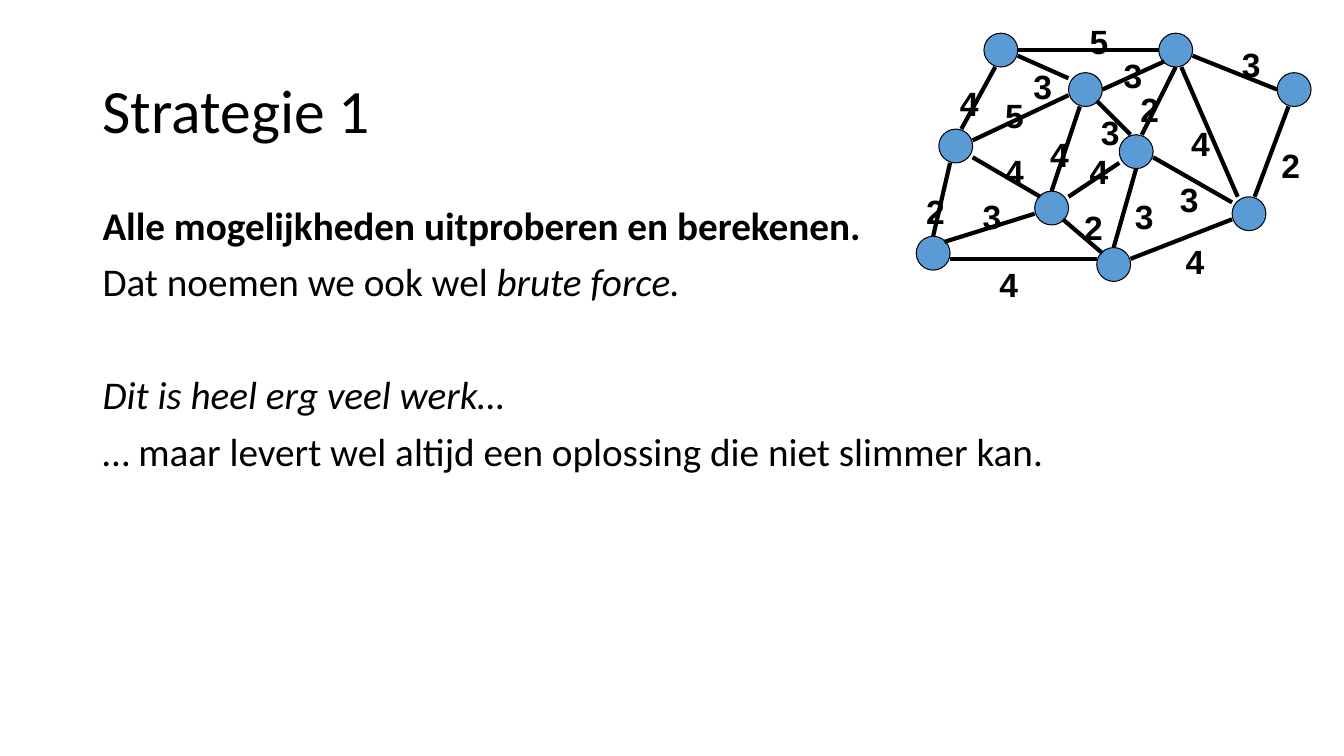
import pptx
import pptx.util
import pptx.dml.color
import pptx.enum.shapes
import pptx.enum.text
import pptx.oxml
import pptx.oxml.ns
from pptx.util import Cm


def color(hex_string):
    return pptx.dml.color.RGBColor.from_string(hex_string)


def format_run(run, font_name, size, bold=False, italic=False):
    run.font.name = font_name
    run.font.size = pptx.util.Pt(size)
    run.font.bold = bold
    run.font.italic = italic
    run.font.color.rgb = color("000000")


presentation = pptx.Presentation()
presentation.slide_width = Cm(33.87)
presentation.slide_height = Cm(19.05)
slide = presentation.slides.add_slide(presentation.slide_layouts[1])

# Title and body placeholders
title = slide.shapes.title
body = slide.placeholders[1]
for placeholder, top, height in [(title, 1.01, 3.68), (body, 5.07, 12.09)]:
    placeholder.left, placeholder.top = Cm(2.33), Cm(top)
    placeholder.width, placeholder.height = Cm(29.21), Cm(height)
    placeholder.text_frame.auto_size = pptx.enum.text.MSO_AUTO_SIZE.NONE

title.text_frame.text = "Strategie 1"
title.text_frame.vertical_anchor = pptx.enum.text.MSO_ANCHOR.MIDDLE
title_paragraph = title.text_frame.paragraphs[0]
title_paragraph.alignment = pptx.enum.text.PP_ALIGN.LEFT
title_paragraph.line_spacing = 0.9
format_run(title_paragraph.runs[0], "Calibri", 44)

# Body paragraphs: space before, then runs as (text, bold, italic)
body_paragraphs = [
    (10, [("Alle mogelijkheden uitproberen en berekenen.", True, False)]),
    (10, [("Dat noemen we ook wel ", False, False), ("brute force.", False, True)]),
    (50.75, [("Dit is heel erg veel werk…", False, True)]),
    (10, [("… maar levert wel altijd een oplossing die niet slimmer kan.", False, False)]),
]
body.text_frame.text = "\n".join("" for _ in body_paragraphs)
for paragraph, (space_before, runs) in zip(body.text_frame.paragraphs, body_paragraphs):
    paragraph.line_spacing = 0.9
    paragraph.space_before = pptx.util.Pt(space_before)
    paragraph.space_after = pptx.util.Pt(0)
    properties = paragraph._p.get_or_add_pPr()
    properties.set("marL", "0")
    properties.set("indent", "0")
    properties.append(pptx.oxml.parse_xml(f'<a:buNone {pptx.oxml.ns.nsdecls("a")}/>'))
    for text, bold, italic in runs:
        run = paragraph.add_run()
        run.text = text
        format_run(run, "Calibri", 28, bold, italic)

# Weighted graph, laid out on a grid of 70 units across
graph_left, graph_top, unit = 23.09, 0.41, 9.95 / 70
graph = slide.shapes.add_group_shape()

nodes = [(12, 3), (43, 3), (64, 10), (36, 21), (27, 10),
         (4, 20), (0, 39), (21, 31), (32, 41), (56, 32)]

# Each edge: start, end, weight, corner of the weight label
edges = [
    ((5, 40), (21, 35), 3, (10, 31)),
    ((8, 20), (14, 9), 4, (6, 11)),
    ((6, 26), (3, 39), 2, (0, 30)),
    ((6, 43), (32, 43), 4, (13, 43)),
    ((26, 36), (33, 42), 2, (28, 33)),
    ((10, 22), (27, 14), 5, (14, 13)),
    ((18, 7), (27, 11), 3, (19, 8)),
    ((18, 6), (43, 6), 5, (29, 0)),
    ((49, 7), (64, 13), 3, (56, 4)),
    ((33, 13), (44, 8), 3, (35, 6)),
    ((29, 16), (24, 31), 4, (22, 20)),
    ((10, 25), (22, 32), 4, (14, 23)),
    ((32, 15), (38, 21), 3, (31, 16)),
    ((27, 32), (36, 26), 4, (29, 23)),
    ((39, 27), (35, 41), 3, (37, 31)),
    ((38, 43), (56, 36), 4, (46, 39)),
    ((42, 25), (56, 33), 3, (45, 28)),
    ((47, 9), (57, 32), 4, (47, 18)),
    ((66, 16), (60, 32), 2, (63, 22)),
    ((46, 9), (40, 21), 2, (38, 12)),
]


def place(point):
    return Cm(graph_left + point[0] * unit), Cm(graph_top + point[1] * unit)


for node in nodes:
    circle = graph.shapes.add_shape(
        pptx.enum.shapes.MSO_SHAPE.OVAL, *place(node), Cm(6 * unit), Cm(6 * unit))
    circle.shadow.inherit = False
    circle.fill.solid()
    circle.fill.fore_color.rgb = color("5B9BD5")
    circle.line.color.rgb = color("000000")
    circle.line.width = pptx.util.Pt(0.75)

for start, end, weight, corner in edges:
    connector = graph.shapes.add_connector(
        pptx.enum.shapes.MSO_CONNECTOR.STRAIGHT, *place(start), *place(end))
    connector.line.color.rgb = color("000000")
    connector.line.width = pptx.util.Pt(3)
    connector._element.spPr.append(
        pptx.oxml.parse_xml(f'<a:effectLst {pptx.oxml.ns.nsdecls("a")}/>'))

# Weights lie on top of all edges
for start, end, weight, corner in edges:
    label = graph.shapes.add_textbox(*place(corner), Cm(1), Cm(1.28))
    label.text_frame.word_wrap = False
    label.text_frame.auto_size = pptx.enum.text.MSO_AUTO_SIZE.SHAPE_TO_FIT_TEXT
    label.text_frame.text = str(weight)
    format_run(label.text_frame.paragraphs[0].runs[0], "Arial", 24, bold=True)

presentation.save("out.pptx")
